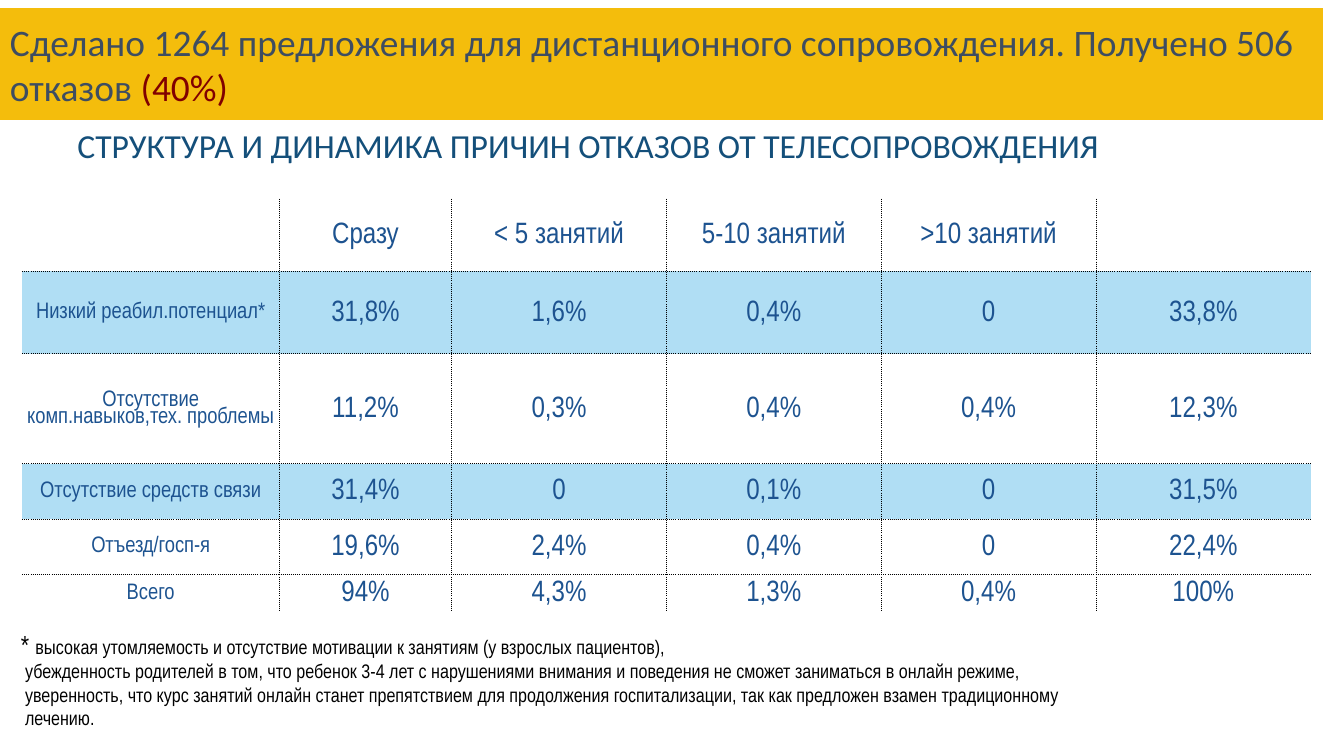
from lxml import etree
from pptx import Presentation
from pptx import util as u
from pptx.dml.color import RGBColor
from pptx.enum import shapes, text
from pptx.oxml.ns import qn

PX = 9144
AMBER = RGBColor(0xF4, 0xBD, 0x0C)
SLATE = RGBColor(0x3E, 0x4D, 0x61)
MAROON = RGBColor(0x80, 0, 0)
NAVY = RGBColor(0x14, 0x4F, 0x7A)
BLUE = RGBColor(0x1D, 0x53, 0x90)
SKY = RGBColor(0xB0, 0xDE, 0xF4)
BLACK = RGBColor(0, 0, 0)

COLUMNS = [255, 171, 213, 213, 213, 213]
ROWS = [72, 82, 109, 55, 55, 37]
REASONS = [
    ["", "Сразу", "< 5 занятий", "5-10 занятий", ">10 занятий", ""],
    ["Низкий реабил.потенциал*", "31,8%", "1,6%", "0,4%", "0", "33,8%"],
    ["Отсутствие комп.навыков,тех. проблемы", "11,2%", "0,3%", "0,4%", "0,4%", "12,3%"],
    ["Отсутствие средств связи", "31,4%", "0", "0,1%", "0", "31,5%"],
    ["Отъезд/госп-я", "19,6%", "2,4%", "0,4%", "0", "22,4%"],
    ["Всего", "94%", "4,3%", "1,3%", "0,4%", "100%"],
]
NOTES = [
    "убежденность родителей в том, что ребенок 3-4 лет с нарушениями внимания и поведения не сможет заниматься в онлайн режиме,",
    "уверенность, что курс занятий онлайн станет препятствием для продолжения госпитализации, так как предложен взамен традиционному",
    "лечению.",
]


def emu(*lengths):
    return [length * PX for length in lengths]


def add_run(p, words, size, font, color):
    r = p.add_run()
    r.text = words
    r.font.size = u.Pt(size)
    r.font.name = font
    r.font.color.rgb = color


def add_text_frame(s, box):
    tf = s.shapes.add_textbox(*emu(*box)).text_frame
    tf.word_wrap = True
    return tf


def add_banner(s, box):
    sp = s.shapes.add_shape(shapes.MSO_SHAPE.RECTANGLE, *emu(*box))
    sp.shadow.inherit = False
    sp.fill.solid()
    sp.fill.fore_color.rgb = AMBER
    sp.line.fill.background()
    tf = sp.text_frame
    tf.word_wrap = True
    tf.vertical_anchor = text.MSO_ANCHOR.MIDDLE
    p = tf.paragraphs[0]
    p.alignment = text.PP_ALIGN.LEFT
    add_run(p, "Сделано 1264 предложения для дистанционного сопровождения. Получено 506 отказов ",
            26.7, "Calibri", SLATE)
    add_run(p, "(40%)", 26.7, "Calibri", MAROON)


def add_heading(s, box):
    p = add_text_frame(s, box).paragraphs[0]
    add_run(p, "СТРУКТУРА И ДИНАМИКА ПРИЧИН ОТКАЗОВ ОТ ТЕЛЕСОПРОВОЖДЕНИЯ", 24, "Calibri", NAVY)


def add_borders(cell, sides):
    tc_pr = cell._tc.get_or_add_tcPr()
    for side, dotted in sides.items():
        ln = etree.SubElement(tc_pr, qn("a:ln" + side), w=str(u.Pt(0.5)))
        if dotted:
            fill = etree.SubElement(ln, qn("a:solidFill"))
            etree.SubElement(fill, qn("a:srgbClr"), val=str(BLACK))
            etree.SubElement(ln, qn("a:prstDash"), val="sysDot")
        else:
            etree.SubElement(ln, qn("a:noFill"))


def add_reasons_table(s, box):
    table = s.shapes.add_table(len(ROWS), len(COLUMNS), *emu(*box)).table
    table.first_row = False
    table.horz_banding = False
    for column, width in zip(table.columns, emu(*COLUMNS)):
        column.width = width
    for row, height in zip(table.rows, emu(*ROWS)):
        row.height = height
    for i, values in enumerate(REASONS):
        for j, value in enumerate(values):
            cell = table.cell(i, j)
            add_borders(cell, {"L": j > 0, "R": j < len(COLUMNS) - 1,
                               "T": i > 0, "B": i < len(ROWS) - 1})
            if i in (1, 3):
                cell.fill.solid()
                cell.fill.fore_color.rgb = SKY
            else:
                cell.fill.background()
            cell.margin_left, cell.margin_right, cell.margin_top, cell.margin_bottom = emu(2, 2, 2, 0)
            cell.vertical_anchor = text.MSO_ANCHOR.MIDDLE
            p = cell.text_frame.paragraphs[0]
            p.alignment = text.PP_ALIGN.CENTER
            if j == 0:
                p.line_spacing = 0.8
            if value:
                add_run(p, value, 21 if j else 16, "Arial Narrow", BLUE)


def add_footnote(s, box):
    tf = add_text_frame(s, box)
    p = tf.paragraphs[0]
    add_run(p, "* ", 18.7, "Arial Narrow", BLACK)
    add_run(p, "высокая утомляемость и отсутствие мотивации к занятиям (у взрослых пациентов),",
            14, "Arial Narrow", BLACK)
    for note in NOTES:
        p = tf.add_paragraph()
        p._p.get_or_add_pPr().set("marL", str(4 * PX))
        add_run(p, note, 14, "Arial Narrow", BLACK)


def main():
    prs = Presentation()
    prs.slide_width, prs.slide_height = emu(1333, 750)
    s = prs.slides.add_slide(prs.slide_layouts[6])
    add_banner(s, (0, 8, 1312, 111))
    add_reasons_table(s, (22, 197, sum(COLUMNS), sum(ROWS)))
    add_footnote(s, (11, 618, 1289, 112))
    add_heading(s, (67, 119, 1230, 50))
    prs.save("out.pptx")


if __name__ == "__main__":
    main()
